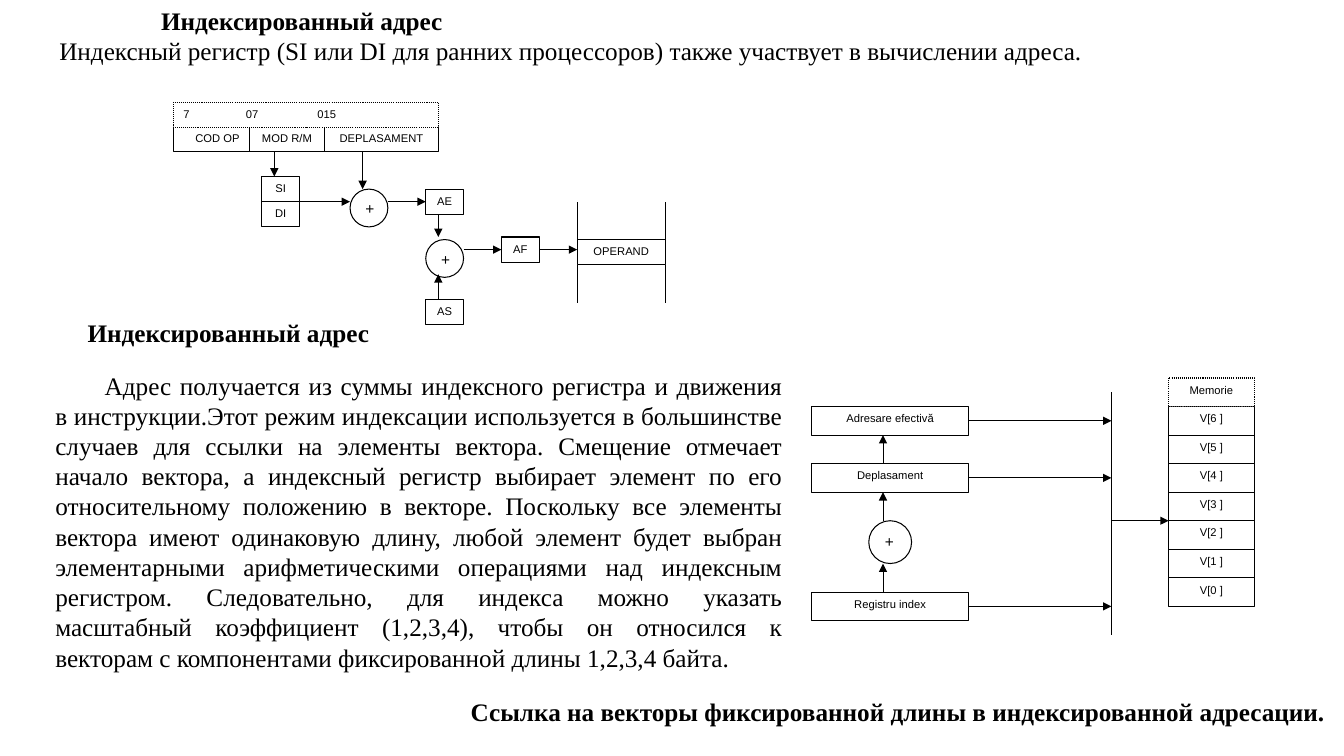
from dataclasses import dataclass

from lxml.etree import SubElement
from pptx import Presentation
from pptx.dml.color import RGBColor
from pptx.enum.dml import MSO_LINE
from pptx.enum.shapes import MSO_CONNECTOR, MSO_SHAPE
from pptx.enum.text import MSO_ANCHOR, MSO_AUTO_SIZE, PP_ALIGN
from pptx.oxml.ns import qn
from pptx.util import Inches, Pt


@dataclass(frozen=True)
class Theme:
    ink: RGBColor = RGBColor(0, 0, 0)
    paper: RGBColor = RGBColor(255, 255, 255)
    prose_font: str = "Times New Roman"
    label_font: str = "Arial"
    prose_size: int = 18
    label_size: int = 8
    plus_size: int = 11
    line_width: float = 0.75
    first_indent: float = 0.49


THEME = Theme()

EXPLANATION = (
    "Адрес получается из суммы индексного регистра и движения в инструкции."
    "Этот режим индексации используется в большинстве случаев для ссылки на "
    "элементы вектора. Смещение отмечает начало вектора, а индексный регистр "
    "выбирает элемент по его относительному положению в векторе. Поскольку "
    "все элементы вектора имеют одинаковую длину, любой элемент будет выбран "
    "элементарными арифметическими операциями над индексным регистром. "
    "Следовательно, для индекса можно указать масштабный коэффициент "
    "(1,2,3,4), чтобы он относился к векторам с компонентами фиксированной "
    "длины 1,2,3,4 байта."
)


def style_runs(paragraph, font_name, size, bold=False):
    for run in paragraph.runs:
        run.font.name = font_name
        run.font.size = Pt(size)
        run.font.bold = bold
        run.font.color.rgb = THEME.ink


class Diagram:
    """A group of boxes and arrows on a square grid that spans the box width."""

    def __init__(self, slide, box, columns):
        self.left, self.top, width, _ = box
        self.unit = width / columns
        self.shapes = slide.shapes.add_group_shape().shapes

    def point(self, x, y):
        return Inches(self.left + x * self.unit), Inches(self.top + y * self.unit)

    def node(self, label, x, y, width, height, kind=MSO_SHAPE.RECTANGLE,
             size=THEME.label_size, align=PP_ALIGN.CENTER, dotted=False, tabs=()):
        node = self.shapes.add_shape(kind, *self.point(x, y),
                                     Inches(width * self.unit), Inches(height * self.unit))
        node.shadow.inherit = False
        node.fill.solid()
        node.fill.fore_color.rgb = THEME.paper
        node.line.color.rgb = THEME.ink
        node.line.width = Pt(THEME.line_width)
        if dotted:
            node.line.dash_style = MSO_LINE.ROUND_DOT
        frame = node.text_frame
        frame.vertical_anchor = MSO_ANCHOR.TOP
        frame.text = label
        paragraph = frame.paragraphs[0]
        paragraph.alignment = align
        if tabs:
            tab_list = SubElement(paragraph._p.get_or_add_pPr(), qn("a:tabLst"))
            for position in tabs:
                SubElement(tab_list, qn("a:tab"), pos=str(Inches(position)), algn="l")
        style_runs(paragraph, THEME.label_font, size)

    def adder(self, x, y, align=PP_ALIGN.CENTER):
        self.node("+", x, y, 3, 3, MSO_SHAPE.OVAL, THEME.plus_size, align)

    def line(self, x1, y1, x2, y2, arrow=True):
        line = self.shapes.add_connector(
            MSO_CONNECTOR.STRAIGHT, *self.point(x1, y1), *self.point(x2, y2))
        line.line.color.rgb = THEME.ink
        line.line.width = Pt(THEME.line_width)
        properties = line._element.spPr
        if arrow:
            SubElement(properties.find(qn("a:ln")), qn("a:tailEnd"), type="triangle")
        SubElement(properties, qn("a:effectLst"))


def add_prose(slide, box, paragraphs, wrap=True):
    """Each paragraph is (text, bold, alignment, left margin, first-line indent)."""
    frame = slide.shapes.add_textbox(*map(Inches, box)).text_frame
    frame.word_wrap = wrap
    frame.auto_size = MSO_AUTO_SIZE.SHAPE_TO_FIT_TEXT
    frame.text = "\n".join(text for text, *_ in paragraphs)
    for paragraph, (_, bold, align, margin, indent) in zip(frame.paragraphs, paragraphs):
        paragraph.alignment = align
        properties = paragraph._p.get_or_add_pPr()
        properties.set("marL", str(Inches(margin)))
        properties.set("indent", str(Inches(indent)))
        style_runs(paragraph, THEME.prose_font, THEME.prose_size, bold)


def add_address_diagram(slide, box):
    diagram = Diagram(slide, box, columns=39)
    # Registers, segment and resulting addresses
    for label, x, y in (("AE", 20, 7), ("AS", 20, 15.75), ("AF", 26, 10.8),
                        ("SI", 7, 6), ("DI", 7, 8)):
        diagram.node(label, x, y, 3, 2)
    # Instruction fields under the bit numbers
    for label, x, width in (("COD OP", 0, 7), ("MOD R/M", 6, 6), ("DEPLASAMENT", 12, 9)):
        diagram.node(label, x, 2, width, 2)
    diagram.node("7\t07\t015", 0, 0.1, 21, 2, align=PP_ALIGN.LEFT,
                 dotted=True, tabs=(0.62, 1.33))
    # Adders and operand in memory
    diagram.adder(14, 7)
    diagram.adder(20, 11)
    diagram.node("OPERAND", 32, 11, 7, 2)
    for wall in (32, 39):
        for start, end in ((11, 8), (13, 16)):
            diagram.line(wall, start, wall, end, arrow=False)
    # Data flow
    for ends in ((8, 4, 8, 6), (15, 4, 15, 7), (10, 8, 14, 8), (17, 8, 20, 8),
                 (21, 9, 21, 10.8), (21, 15.75, 21, 13.75),
                 (23, 11.8, 26, 11.8), (29, 11.8, 32, 11.8)):
        diagram.line(*ends)


def add_vector_diagram(slide, box):
    diagram = Diagram(slide, box, columns=31)
    bus = 21
    # Address sources, each linked to the bus
    for label, y in (("Adresare efectivă", 2), ("Deplasament", 6), ("Registru index", 15)):
        diagram.node(label, 0, y, 11, 2)
        diagram.line(11, y + 1, bus, y + 1)
    diagram.adder(4, 10, PP_ALIGN.LEFT)
    for start, end in ((15, 13), (10, 8), (6, 4)):
        diagram.line(5, start, 5, end)
    # Bus and memory column
    diagram.line(bus, 1, bus, 18, arrow=False)
    diagram.line(bus, 10, 25, 10)
    for index in range(7):
        diagram.node(f"V[{index} ]", 25, 2 * (7 - index), 6, 2)
    diagram.node("Memorie", 25, 0, 6, 2, dotted=True)


def build_slide(slide):
    indent = THEME.first_indent
    # Introduction and address calculation
    add_prose(slide, (0, 0, 12.76, 0.71), [
        ("Индексированный адрес", True, PP_ALIGN.JUSTIFY, 1.5, 0),
        ("Индексный регистр (SI или DI для ранних процессоров) также участвует "
         "в вычислении адреса.", False, PP_ALIGN.JUSTIFY, 0, indent)])
    add_address_diagram(slide, (1.72, 1, 4.88, 2.22))
    add_prose(slide, (0.26, 3.1, 3.52, 0.4),
              [("Индексированный адрес", True, PP_ALIGN.CENTER, 0, indent)], wrap=False)
    # Explanation and vector reference
    add_prose(slide, (0.45, 3.62, 7.41, 3.13),
              [(EXPLANATION, False, PP_ALIGN.JUSTIFY, 0, indent)])
    add_vector_diagram(slide, (8.05, 3.75, 4.39, 2.55))
    add_prose(slide, (4.57, 6.86, 8.76, 0.4),
              [("Ссылка на векторы фиксированной длины в индексированной адресации.",
                True, PP_ALIGN.LEFT, 0, 0)], wrap=False)


def main():
    deck = Presentation()
    deck.slide_width, deck.slide_height = Inches(13.33), Inches(7.5)
    build_slide(deck.slides.add_slide(deck.slide_layouts[6]))
    deck.save("out.pptx")


if __name__ == "__main__":
    main()
